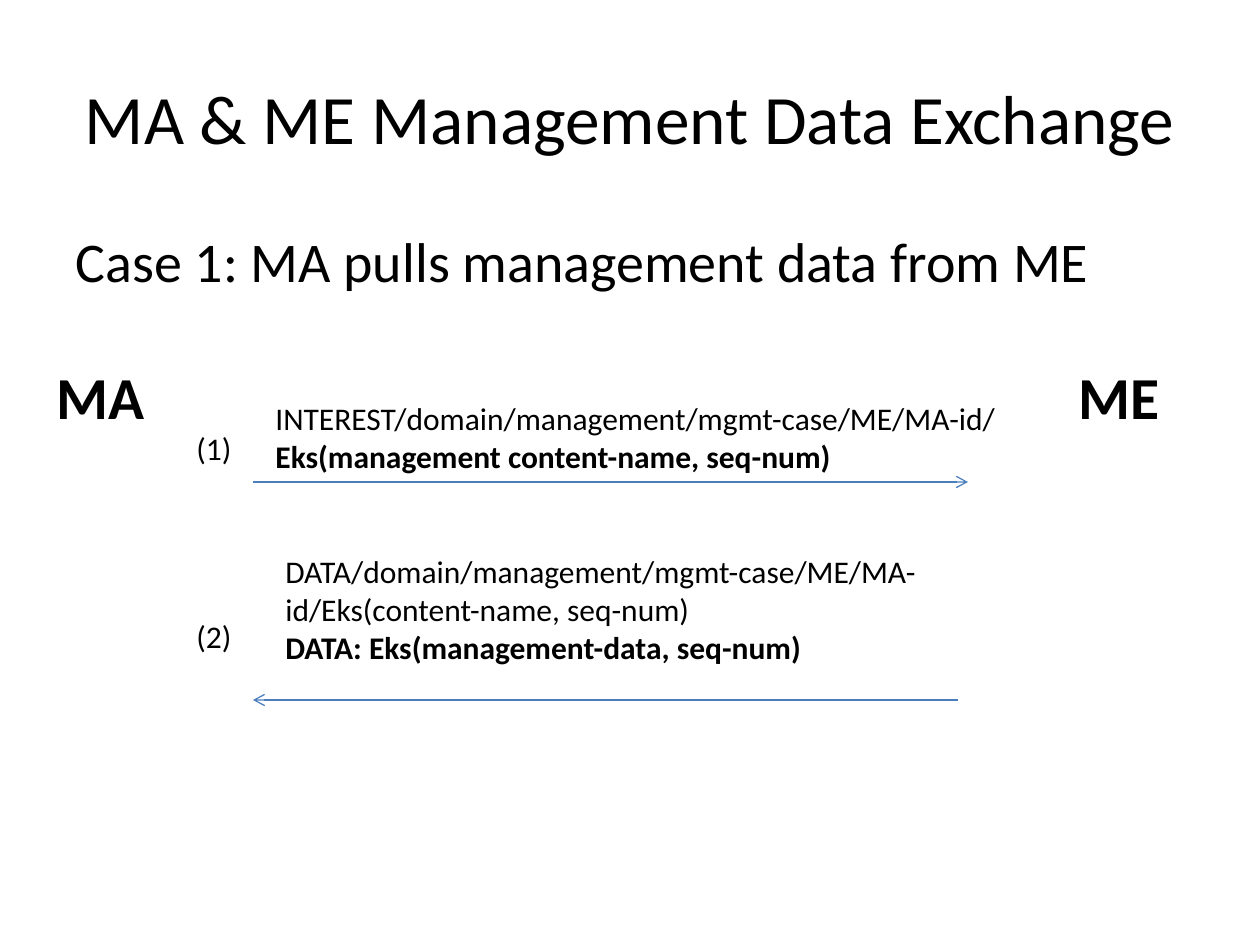
from lxml import etree
from pptx import Presentation
from pptx.dml.color import RGBColor
from pptx.enum.shapes import MSO_CONNECTOR
from pptx.enum.text import MSO_ANCHOR, PP_ALIGN
from pptx.oxml.ns import qn
from pptx.util import Emu, Inches, Pt

STRAIGHT = MSO_CONNECTOR.STRAIGHT
MIDDLE = MSO_ANCHOR.MIDDLE
CENTER = PP_ALIGN.CENTER
BLACK = RGBColor(0x00, 0x00, 0x00)
BLUE = RGBColor(0x4B, 0x7E, 0xBC)
FONT = "Calibri"
PX = 914400 / 126


def px(*lengths):
    """Turn pixel lengths into EMU."""
    return [Emu(round(n * PX)) for n in lengths]


def style(r, size, bold=False):
    r.font.name = FONT
    r.font.size = Pt(size)
    r.font.bold = bold
    r.font.color.rgb = BLACK


prs = Presentation()
prs.slide_width, prs.slide_height = Inches(10), Inches(7.5)
s = prs.slides.add_slide(prs.slide_layouts[1])

# Title and case heading
title, body = s.placeholders
title.left, title.top, title.width, title.height = px(63, 38, 1134, 157)
title.text_frame.text = "MA & ME Management Data Exchange"
title.text_frame.vertical_anchor = MIDDLE
title.text_frame.paragraphs[0].alignment = CENTER
style(title.text_frame.paragraphs[0].runs[0], 39.6)

body.left, body.top, body.width, body.height = px(63, 220, 1134, 624)
body.text_frame.text = "Case 1: MA pulls management data from ME"
p = body.text_frame.paragraphs[0]
style(p.runs[0], 32)
etree.SubElement(p._p.get_or_add_pPr(), qn("a:buNone"))

# Text boxes: position, size, then paragraphs made of (text, bold) runs
labels = [
    ((273, 546, 694, 127), 18, [
        [("DATA/domain/management/mgmt-case/ME/MA-id/Eks(content-name, seq-num)", False)],
        [("DATA: Eks(management-data, seq-num)", True)]]),
    ((44, 354, 118, 84), 34, [[("MA", True)]]),
    ((1066, 354, 118, 84), 34, [[("ME", True)]]),
    ((263, 393, 764, 89), 18, [
        [("INTEREST/domain/management/mgmt-case/ME/MA-id/", False),
         ("Eks(management content-name, seq-num)", True)]]),
    ((184, 423, 139, 50), 18, [[("(1)", False)]]),
    ((184, 611, 139, 50), 18, [[("(2)", False)]]),
]
for box, size, paragraphs in labels:
    tf = s.shapes.add_textbox(*px(*box)).text_frame
    tf.word_wrap = True
    for i, runs in enumerate(paragraphs):
        p = tf.add_paragraph() if i else tf.paragraphs[0]
        for text, bold in runs:
            r = p.add_run()
            r.text = text
            style(r, size, bold)

# Request goes right to ME, reply comes back left to MA
for x1, x2, y in [(253, 968, 482), (958, 253, 700)]:
    arrow = s.shapes.add_connector(STRAIGHT, *px(x1, y, x2, y))
    arrow.line.color.rgb = BLUE
    arrow.line.width = Pt(0.75)
    etree.SubElement(arrow.line._get_or_add_ln(), qn("a:tailEnd"), type="arrow")
    etree.SubElement(arrow._element.spPr, qn("a:effectLst"))

prs.save("out.pptx")
